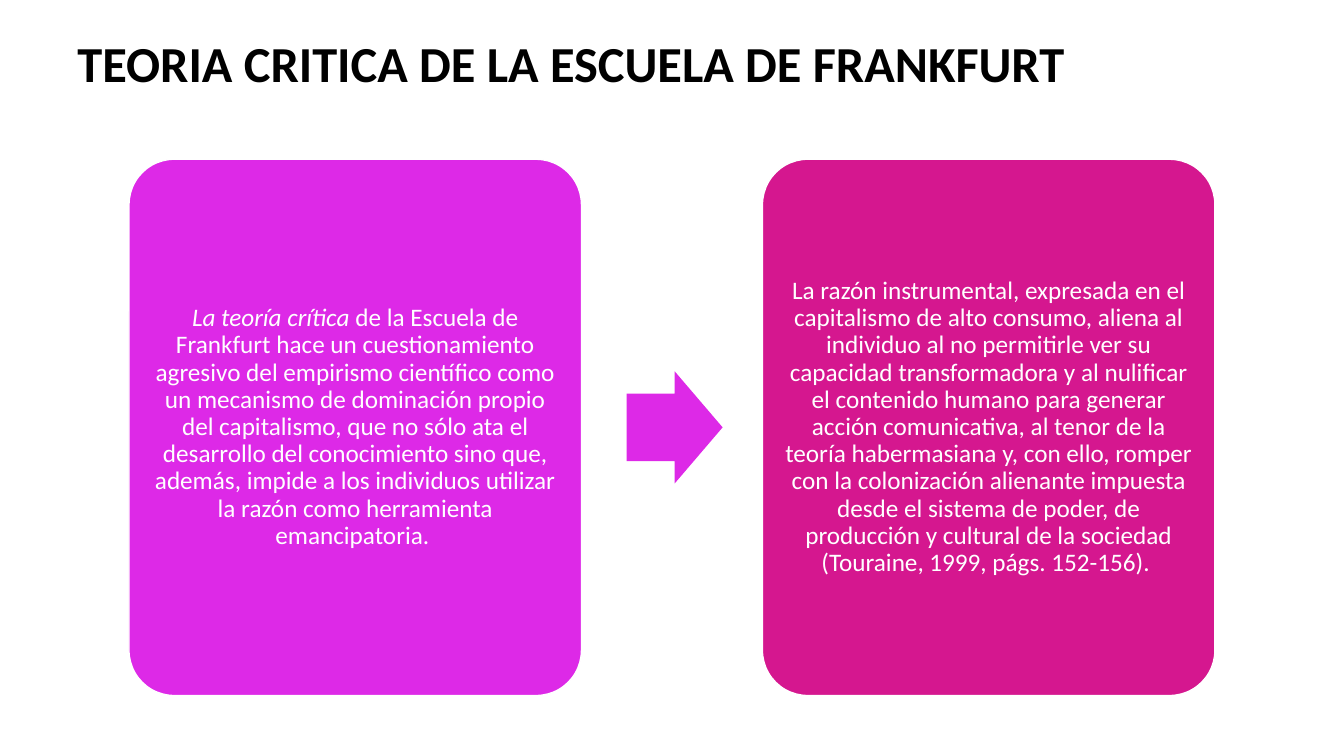
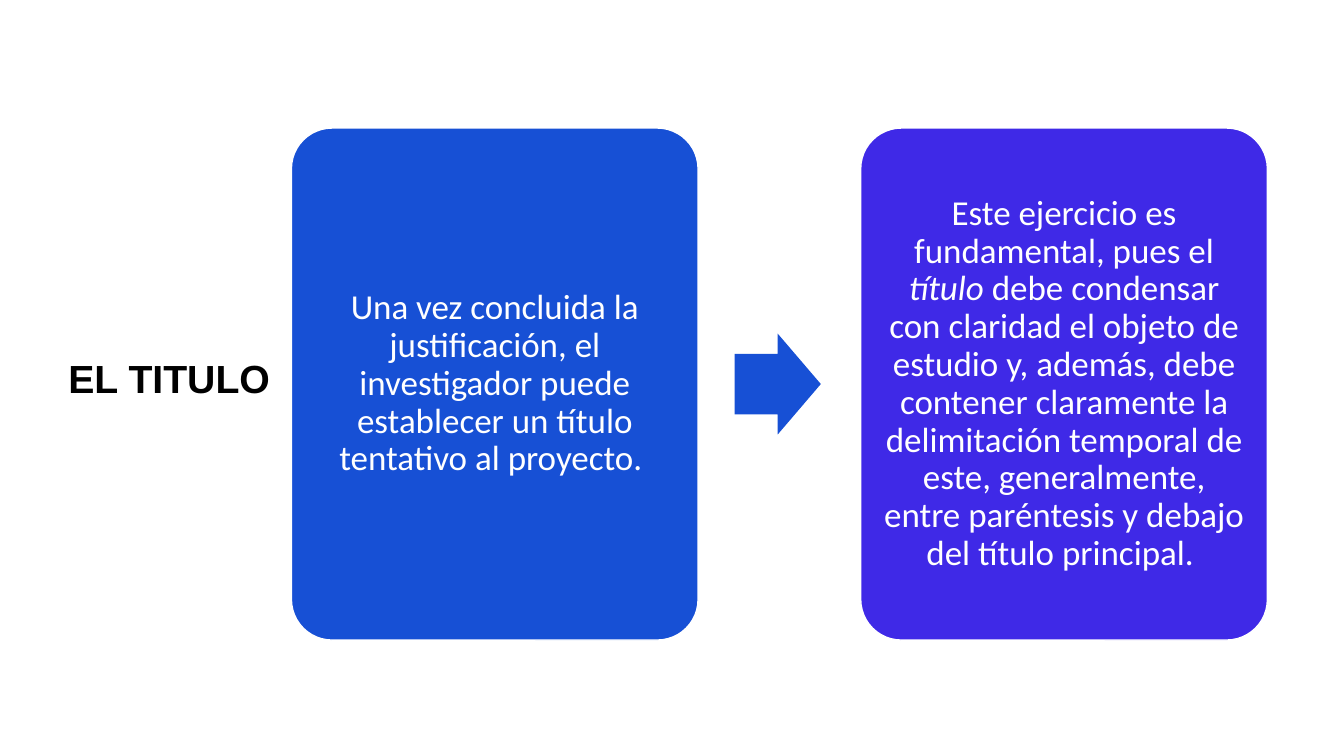
import pptx
import pptx.util
import pptx.dml.color
import pptx.enum.shapes
import pptx.enum.text

In, Pt = pptx.util.Inches, pptx.util.Pt
SHAPE = pptx.enum.shapes.MSO_SHAPE
ANCHOR = pptx.enum.text.MSO_ANCHOR
ALIGN = pptx.enum.text.PP_ALIGN

WHITE, BLACK = "FFFFFF", "000000"
MAGENTA, PINK = "DD29E7", "D5178F"
BLUE, VIOLET = "1750D5", "3F29E7"
LINE_SPACING = 0.9


def rgb(value):
    return pptx.dml.color.RGBColor.from_string(value)


def write(sp, runs, align, anchor, margin, color, **font):
    """Fill a shape with one paragraph of (text, font overrides) runs."""
    tf = sp.text_frame
    frame = dict(word_wrap=True, vertical_anchor=anchor)
    frame.update({f"margin_{side}": In(m) for side, m in margin.items()})
    for name, value in frame.items():
        setattr(tf, name, value)
    p = tf.paragraphs[0]
    p.alignment, p.line_spacing = align, LINE_SPACING
    for text, extra in runs:
        r = p.add_run()
        r.text = text
        r.font.color.rgb = rgb(color)
        for name, value in {**font, **extra}.items():
            setattr(r.font, name, value)


def add_title(s, box, text, anchor, font, size):
    sp = s.shapes.add_textbox(*map(In, box))
    margin = dict(left=0.1, right=0.1, top=0.05, bottom=0.05)
    write(sp, [(text, {})], ALIGN.LEFT, anchor, margin, BLACK,
          name=font, size=Pt(size), bold=True)


def add_block(s, kind, box, fill, adjustments):
    sp = s.shapes.add_shape(kind, *map(In, box))
    sp.shadow.inherit = False
    sp.fill.solid()
    sp.fill.fore_color.rgb = rgb(fill)
    sp.line.fill.background()
    for i, value in enumerate(adjustments):
        sp.adjustments[i] = value
    return sp


def add_card(s, box, fill, runs, size, inset):
    sp = add_block(s, SHAPE.ROUNDED_RECTANGLE, box, fill, [0.1])
    sp.line.color.rgb = rgb(WHITE)
    sp.line.width = Pt(1)
    margin = dict.fromkeys(("left", "right", "top", "bottom"), inset)
    write(sp, runs, ALIGN.CENTER, ANCHOR.MIDDLE, margin, WHITE,
          name="Calibri", size=Pt(size))


def add_process(s, box, steps, size, inset, arrow_gap):
    """Two cards with an arrow between; the gap is 0.4 of a card's width."""
    x, y, w, h = box
    card = w / 2.4
    for i, (fill, runs) in enumerate(steps):
        add_card(s, (x + i * 1.4 * card, y, card, h), fill, runs, size, inset)
    arrow_w, arrow_h = 0.212 * card, 0.248 * card
    arrow = (x + (1 + arrow_gap) * card, y + (h - arrow_h) / 2, arrow_w, arrow_h)
    add_block(s, SHAPE.RIGHT_ARROW, arrow, steps[0][0], [0.6, 0.5])


ITALIC = dict(italic=True)
THEORY_STEPS = [
    (MAGENTA, [
        ("La teoría crítica ", ITALIC),
        ("de la Escuela de Frankfurt hace un cuestionamiento agresivo del "
         "empirismo científico como un mecanismo de dominación propio del "
         "capitalismo, que no sólo ata el desarrollo del conocimiento sino que, "
         "además, impide a los individuos utilizar la razón como herramienta "
         "emancipatoria. ", {})]),
    (PINK, [
        ("La razón instrumental, expresada en el capitalismo de alto consumo, "
         "aliena al individuo al no permitirle ver su capacidad transformadora "
         "y al nulificar el contenido humano para generar acción comunicativa, "
         "al tenor de la teoría habermasiana y, con ello, romper con la "
         "colonización alienante impuesta desde el sistema de poder, de "
         "producción y cultural de la sociedad (Touraine, 1999, "
         "págs. 152-156). ", {})]),
]
TITLE_STEPS = [
    (BLUE, [
        ("Una vez concluida la justificación, el investigador puede establecer "
         "un título tentativo al proyecto. ", {})]),
    (VIOLET, [
        ("Este ejercicio es fundamental, pues el ", {}),
        ("título ", ITALIC),
        ("debe condensar con claridad el objeto de estudio y, además, debe "
         "contener claramente la delimitación temporal de este, generalmente, "
         "entre paréntesis y debajo del título principal. ", {})]),
]
SLIDES = [
    (dict(box=(0.67, 0.34, 11.65, 1.24), anchor=ANCHOR.TOP, size=36, font="Calibri",
          text="TEORIA CRITICA DE LA ESCUELA DE FRANKFURT"),
     dict(box=(1.28, 1.58, 10.77, 5.32), steps=THEORY_STEPS, size=18, inset=0.07,
          arrow_gap=0.1)),
    (dict(box=(0.58, 1.79, 3.82, 3.98), anchor=ANCHOR.MIDDLE, size=28, font="Arial",
          text="EL TITULO"),
     dict(box=(2.89, 1.27, 9.68, 5.08), steps=TITLE_STEPS, size=25, inset=0.1,
          arrow_gap=0.09)),
]


def main():
    prs = pptx.Presentation()
    prs.slide_width, prs.slide_height = In(13.33), In(7.5)
    for title, process in SLIDES:
        s = prs.slides.add_slide(prs.slide_layouts[6])
        add_title(s, **title)
        add_process(s, **process)
    prs.save("out.pptx")


if __name__ == "__main__":
    main()
